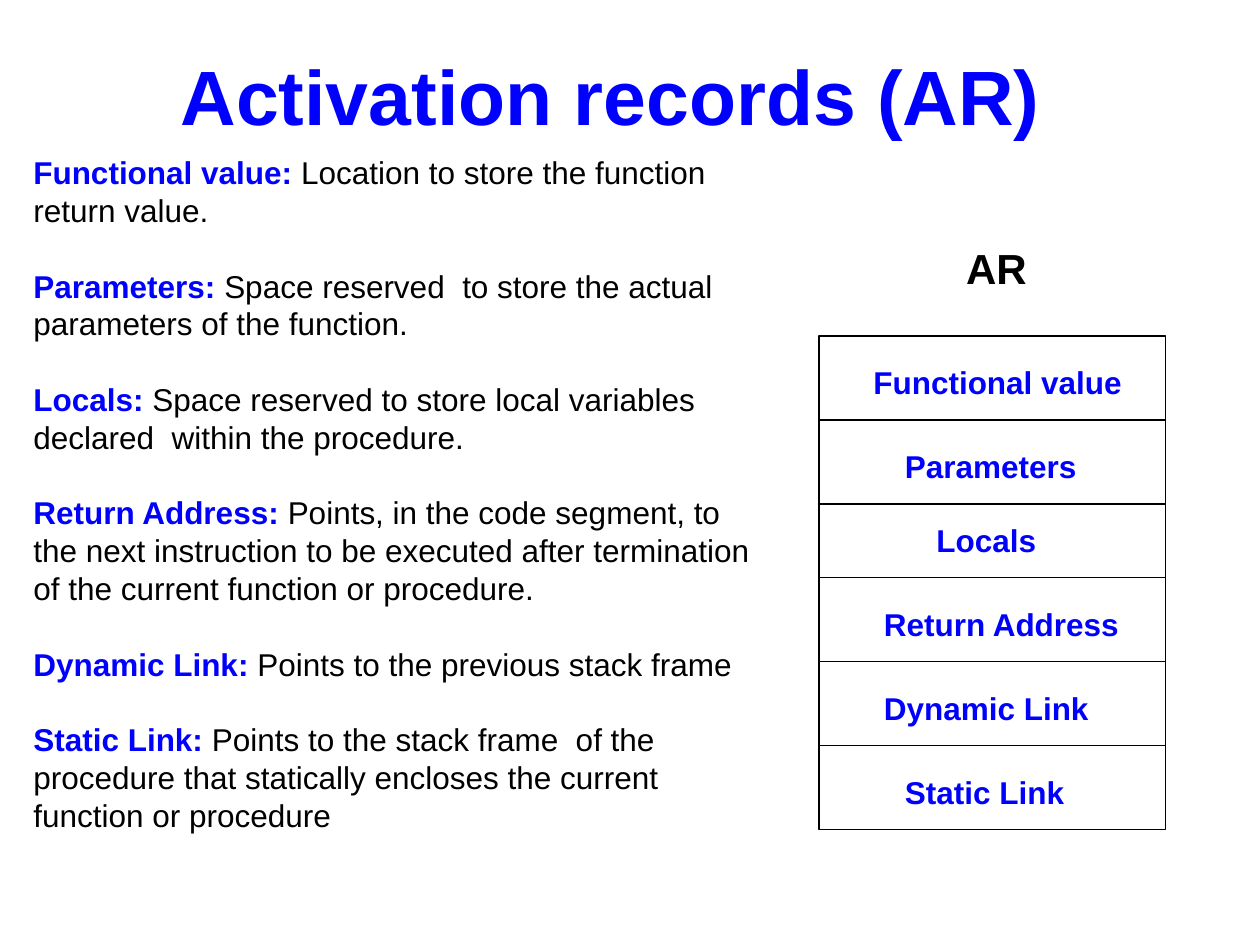
from dataclasses import dataclass
from lxml import etree
from pptx import Presentation
from pptx.dml.color import RGBColor
from pptx.enum.shapes import MSO_CONNECTOR, MSO_SHAPE
from pptx.enum.text import MSO_AUTO_SIZE
from pptx.oxml.ns import qn
from pptx.util import Pt

STRAIGHT = MSO_CONNECTOR.STRAIGHT
RECTANGLE = MSO_SHAPE.RECTANGLE
FIT_SHAPE = MSO_AUTO_SIZE.SHAPE_TO_FIT_TEXT


@dataclass(frozen=True)
class Theme:
    font: str = "Arial"
    accent: RGBColor = RGBColor(0, 0, 255)
    ink: RGBColor = RGBColor(0, 0, 0)
    title: int = 44
    heading: int = 24
    body: int = 18
    leading: float = 1.2
    rule: float = 0.75


theme = Theme()


def add_line(paragraph, size, runs):
    paragraph.line_spacing = Pt(size * theme.leading)
    for text, color, bold in runs:
        run = paragraph.add_run()
        run.text = text
        run.font.name = theme.font
        run.font.size = Pt(size)
        run.font.bold = bold
        run.font.color.rgb = color


def add_text_box(left, top, width, height):
    box = slide.shapes.add_textbox(Pt(left), Pt(top), Pt(width), Pt(height))
    box.text_frame.word_wrap = False
    box.text_frame.auto_size = FIT_SHAPE
    return box.text_frame


presentation = Presentation()
presentation.slide_width = Pt(720)
presentation.slide_height = Pt(540)
slide = presentation.slides.add_slide(presentation.slide_layouts[6])

title = add_text_box(96, 24, 506, 60)
add_line(title.paragraphs[0], theme.title, [("Activation records (AR)", theme.accent, True)])

record_left, record_top, record_width = 468, 192, 198
fields = [
    ("Functional value", 492, 157, 48),
    ("Parameters", 510, 113, 48),
    ("Locals", 528, 72, 42),
    ("Return Address", 498, 150, 48),
    ("Dynamic Link", 498, 132, 48),
    ("Static Link", 510, 106, 48),
]
record_height = sum(field[3] for field in fields)
record = slide.shapes.add_shape(
    RECTANGLE, Pt(record_left), Pt(record_top), Pt(record_width), Pt(record_height))
record.shadow.inherit = False
record.fill.background()
record.line.color.rgb = theme.ink
record.line.width = Pt(theme.rule)

row_top = record_top
for name, left, width, row_height in fields:
    if row_top > record_top:
        divider = slide.shapes.add_connector(
            STRAIGHT, Pt(record_left), Pt(row_top), Pt(record_left + record_width), Pt(row_top))
        divider.line.color.rgb = theme.ink
        divider.line.width = Pt(theme.rule)
        etree.SubElement(divider._element.spPr, qn("a:effectLst"))
    label_top = row_top + row_height - 36
    label = add_text_box(left, label_top, width, 28.8)
    add_line(label.paragraphs[0], theme.body, [(name, theme.accent, True)])
    row_top += row_height

heading = add_text_box(545, 135, 49, 36)
add_line(heading.paragraphs[0], theme.heading, [("AR", theme.ink, True)])

definitions = [
    ("Functional value: ", ["Location to store the function", "return value."]),
    ("Parameters: ", ["Space reserved  to store the actual", "parameters of the function."]),
    ("Locals: ", ["Space reserved to store local variables", "declared  within the procedure."]),
    ("Return Address: ", [
        "Points, in the code segment, to",
        "the next instruction to be executed after termination",
        "of the current function or procedure."]),
    ("Dynamic Link: ", ["Points to the previous stack frame"]),
    ("Static Link: ", [
        "Points to the stack frame  of the",
        "procedure that statically encloses the current",
        "function or procedure"]),
]
body = add_text_box(12, 84, 423.4, 396)
paragraph = body.paragraphs[0]
for index, (term, lines) in enumerate(definitions):
    if index:
        paragraph = body.add_paragraph()
        paragraph.space_before = Pt(theme.body * theme.leading)
    add_line(paragraph, theme.body, [(term, theme.accent, True), (lines[0], theme.ink, False)])
    for line in lines[1:]:
        paragraph = body.add_paragraph()
        add_line(paragraph, theme.body, [(line, theme.ink, False)])

presentation.save("out.pptx")
